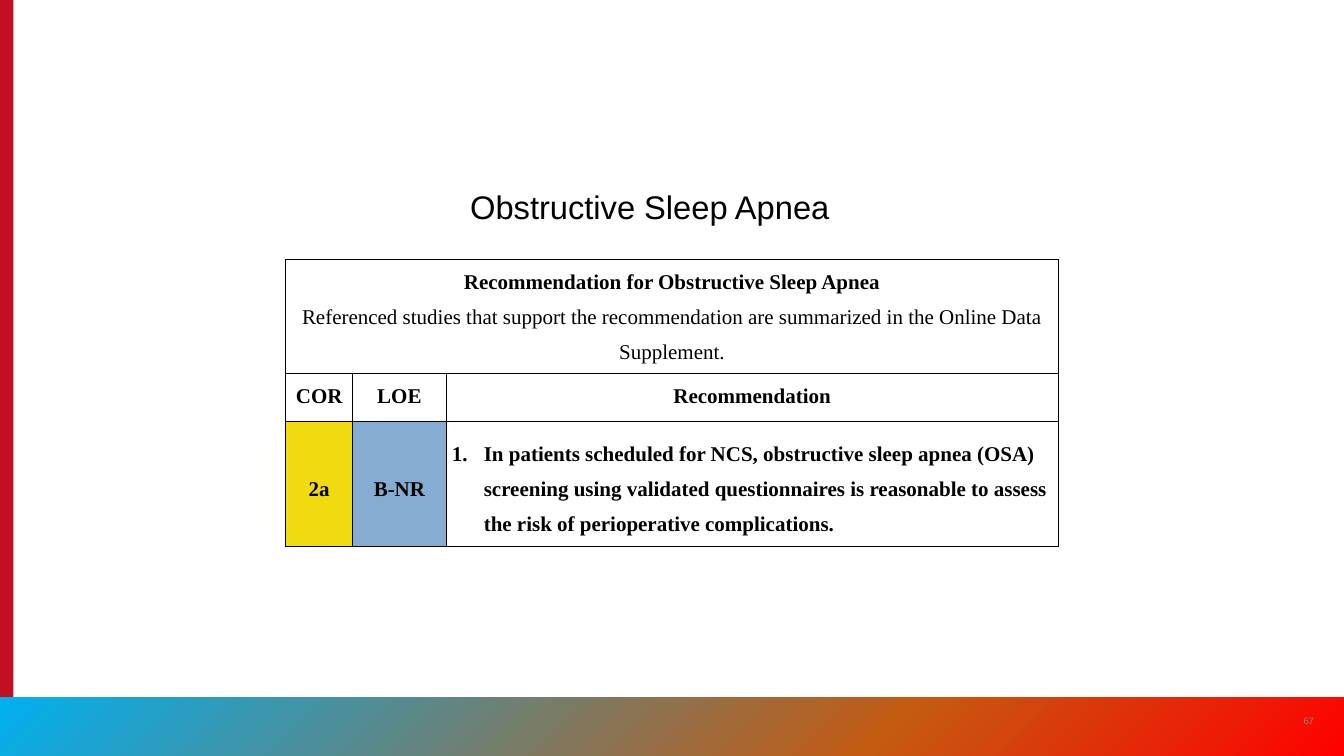
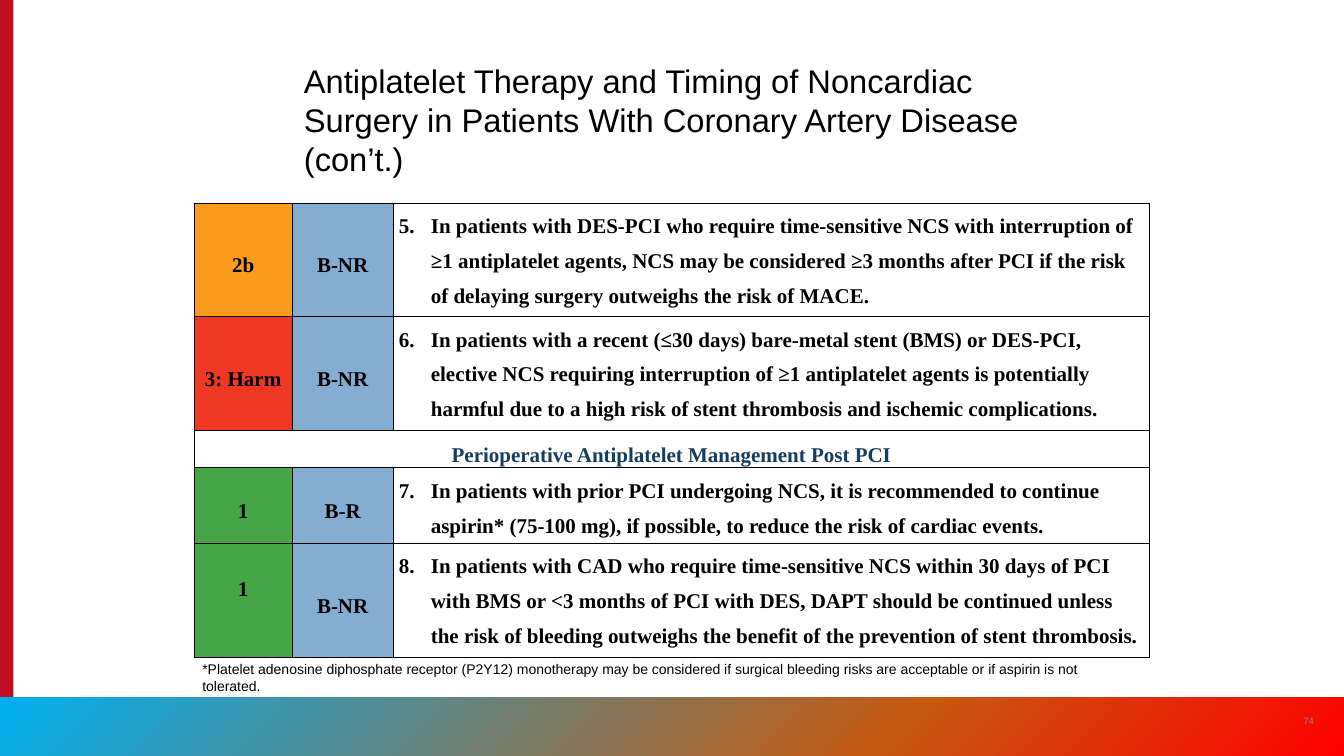
from lxml.etree import SubElement
from pptx import Presentation
from pptx.dml.color import RGBColor
from pptx.enum.shapes import MSO_SHAPE as Shape
from pptx.enum.text import MSO_ANCHOR as Anchor, PP_ALIGN as Align
from pptx.oxml.ns import qn
from pptx.util import Inches, Pt

# The slide is a grid of 16 columns by 9 rows, one inch each.
COLUMNS, ROWS = 16, 9
BAND_TOP = 8.3
BLACK, WHITE, GREY = "000000", "FFFFFF", "8A8B8A"
SIDE_RED, SUBHEAD_BLUE, LOE_BLUE = "C10E21", "153D63", "85ADD1"
BAND_STOPS = [(0, "00B0F0"), (66, "C55A11"), (100, "FF0000")]
COR_COLORS = {"1": "45A547", "2a": "F0DA10", "2b": "F99B1C", "3: Harm": "EF3824"}
TABLE_FONT, SLIDE_FONT = "Times New Roman", "Arial"
TEXT_LINE = 0.45  # height of one table line, in grid rows


def color(hex_string):
    return RGBColor.from_string(hex_string)


def write(paragraph, text, size=18, font=TABLE_FONT, ink=BLACK, bold=False,
          align=Align.LEFT, spacing=None):
    paragraph.alignment = align
    if spacing:
        paragraph.line_spacing = spacing
    run = paragraph.add_run()
    run.text = text
    run.font.size, run.font.name, run.font.bold = Pt(size), font, bold
    run.font.color.rgb = color(ink)


def add_text(slide, text, left, top, width, height, anchor=Anchor.TOP, **style):
    box = slide.shapes.add_textbox(*map(Inches, (left, top, width, height)))
    box.text_frame.word_wrap = True
    box.text_frame.vertical_anchor = anchor
    write(box.text_frame.paragraphs[0], text, font=SLIDE_FONT, **style)


def add_bar(slide, left, top, width, height):
    bar = slide.shapes.add_shape(
        Shape.RECTANGLE, *map(Inches, (left, top, width, height)))
    bar.shadow.inherit = False
    bar.line.fill.background()
    return bar


def fill_gradient(shape, stops):
    """Fill from the top left to the bottom right through all stops."""
    shape.fill.gradient()
    shape.fill.gradient_angle = 315
    stop_list = shape.element.spPr.find(qn("a:gradFill")).find(qn("a:gsLst"))
    for old_stop in list(stop_list):
        stop_list.remove(old_stop)
    for percent, ink in stops:
        stop = SubElement(stop_list, qn("a:gs"), pos=str(percent * 1000))
        SubElement(stop, qn("a:srgbClr"), val=ink)


def add_slide(presentation, number, title, *title_box):
    slide = presentation.slides.add_slide(presentation.slide_layouts[6])
    side = add_bar(slide, 0, 0, COLUMNS / 100, ROWS)
    side.fill.solid()
    side.fill.fore_color.rgb = color(SIDE_RED)
    fill_gradient(add_bar(slide, 0, BAND_TOP, COLUMNS, ROWS - BAND_TOP), BAND_STOPS)
    add_text(slide, str(number), 15.34, 8.34, 0.48, 0.48, anchor=Anchor.MIDDLE,
             size=8, ink=GREY, align=Align.CENTER)
    add_text(slide, title, *title_box, size=28)
    return slide


def add_table(slide, left, top, widths, heights):
    table = slide.shapes.add_table(
        len(heights), len(widths),
        *map(Inches, (left, top, sum(widths), sum(heights)))).table
    table.first_row = table.horz_banding = False
    for column, width in zip(table.columns, widths):
        column.width = Inches(width)
    for row, height in zip(table.rows, heights):
        row.height = Inches(height)
    for cell in table.iter_cells():
        style_cell(cell)
    return table


def style_cell(cell):
    """Black borders, white fill and narrow margins."""
    cell.margin_left = cell.margin_right = Inches(0.07)
    cell.margin_top = cell.margin_bottom = 0
    properties = cell._tc.get_or_add_tcPr()
    for side in "LRTB":
        line = SubElement(properties, qn(f"a:ln{side}"), w=str(Pt(1)))
        SubElement(SubElement(line, qn("a:solidFill")), qn("a:srgbClr"), val=BLACK)
    cell.fill.solid()
    cell.fill.fore_color.rgb = color(WHITE)


def fill_cell(cell, text, fill=WHITE, anchor=Anchor.MIDDLE, **style):
    cell.fill.fore_color.rgb = color(fill)
    cell.vertical_anchor = anchor
    style = {"bold": True, "align": Align.CENTER, "spacing": 1.5, **style}
    write(cell.text_frame.paragraphs[0], text, **style)


def number_paragraph(paragraph, start):
    properties = paragraph._p.get_or_add_pPr()
    indent = Inches(0.38)
    properties.set("marL", str(indent))
    properties.set("indent", str(-indent))
    SubElement(properties, qn("a:buAutoNum"), type="arabicPeriod", startAt=str(start))


def fill_recommendation(table, row, cor, loe, number, text, anchor=Anchor.TOP):
    fill_cell(table.cell(row, 0), cor, fill=COR_COLORS[cor])
    fill_cell(table.cell(row, 1), loe, fill=LOE_BLUE)
    advice = table.cell(row, 2)
    number_paragraph(advice.text_frame.paragraphs[0], number)
    fill_cell(advice, text, anchor=anchor, align=Align.LEFT)


def merge_row(table, row):
    first = table.cell(row, 0)
    first.merge(table.cell(row, len(table.columns) - 1))
    return first


def build_sleep_apnea(presentation):
    slide = add_slide(presentation, 67, "Obstructive Sleep Apnea", 5.5, 2.17, 5, 0.57)
    table = add_table(slide, 3.4, 3.09, [0.8, 1.11, 7.29], [3 * TEXT_LINE, 0.58, 1.48])
    heading = merge_row(table, 0)
    fill_cell(heading, "Recommendation for Obstructive Sleep Apnea", anchor=Anchor.TOP)
    write(heading.text_frame.add_paragraph(),
          "Referenced studies that support the recommendation are summarized "
          "in the Online Data Supplement.", align=Align.CENTER, spacing=1.5)
    for column, label in enumerate(["COR", "LOE", "Recommendation"]):
        fill_cell(table.cell(1, column), label, anchor=Anchor.TOP)
    fill_recommendation(
        table, 2, "2a", "B-NR", 1,
        "In patients scheduled for NCS, obstructive sleep apnea (OSA) screening "
        "using validated questionnaires is reasonable to assess the risk of "
        "perioperative complications.", anchor=Anchor.MIDDLE)


def build_antiplatelet(presentation):
    slide = add_slide(
        presentation, 74,
        "Antiplatelet Therapy and Timing of Noncardiac Surgery in Patients "
        "With Coronary Artery Disease (con’t.)", 3.52, 0.67, 8.97, 1.51)
    line_counts = [3, 3, 1, 2, 3]
    table = add_table(slide, 2.31, 2.42, [1.17, 1.2, 9],
                      [count * TEXT_LINE for count in line_counts])
    recommendations = {
        0: ("2b", "B-NR", 5,
            "In patients with DES-PCI who require time-sensitive NCS with "
            "interruption of ≥1 antiplatelet agents, NCS may be considered "
            "≥3 months after PCI if the risk of delaying surgery outweighs "
            "the risk of MACE."),
        1: ("3: Harm", "B-NR", 6,
            "In patients with a recent (≤30 days) bare-metal stent (BMS) or "
            "DES-PCI, elective NCS requiring interruption of ≥1 antiplatelet "
            "agents is potentially harmful due to a high risk of stent "
            "thrombosis and ischemic complications."),
        3: ("1", "B-R", 7,
            "In patients with prior PCI undergoing NCS, it is recommended to "
            "continue aspirin* (75-100 mg), if possible, to reduce the risk of "
            "cardiac events."),
        4: ("1", "B-NR", 8,
            "In patients with CAD who require time-sensitive NCS within 30 days "
            "of PCI with BMS or <3 months of PCI with DES, DAPT should be "
            "continued unless the risk of bleeding outweighs the benefit of the "
            "prevention of stent thrombosis."),
    }
    for row, recommendation in recommendations.items():
        fill_recommendation(table, row, *recommendation)
    table.cell(4, 0).margin_bottom = Inches(0.4)
    fill_cell(merge_row(table, 2), "Perioperative Antiplatelet Management Post PCI",
              ink=SUBHEAD_BLUE)
    add_text(slide,
             "*Platelet adenosine diphosphate receptor (P2Y12) monotherapy may be "
             "considered if surgical bleeding risks are acceptable or if aspirin "
             "is not tolerated.", 2.31, 7.82, 11.37, 0.5, size=12)


def main():
    presentation = Presentation()
    presentation.slide_width = Inches(COLUMNS)
    presentation.slide_height = Inches(ROWS)
    build_sleep_apnea(presentation)
    build_antiplatelet(presentation)
    presentation.save("out.pptx")


if __name__ == "__main__":
    main()
